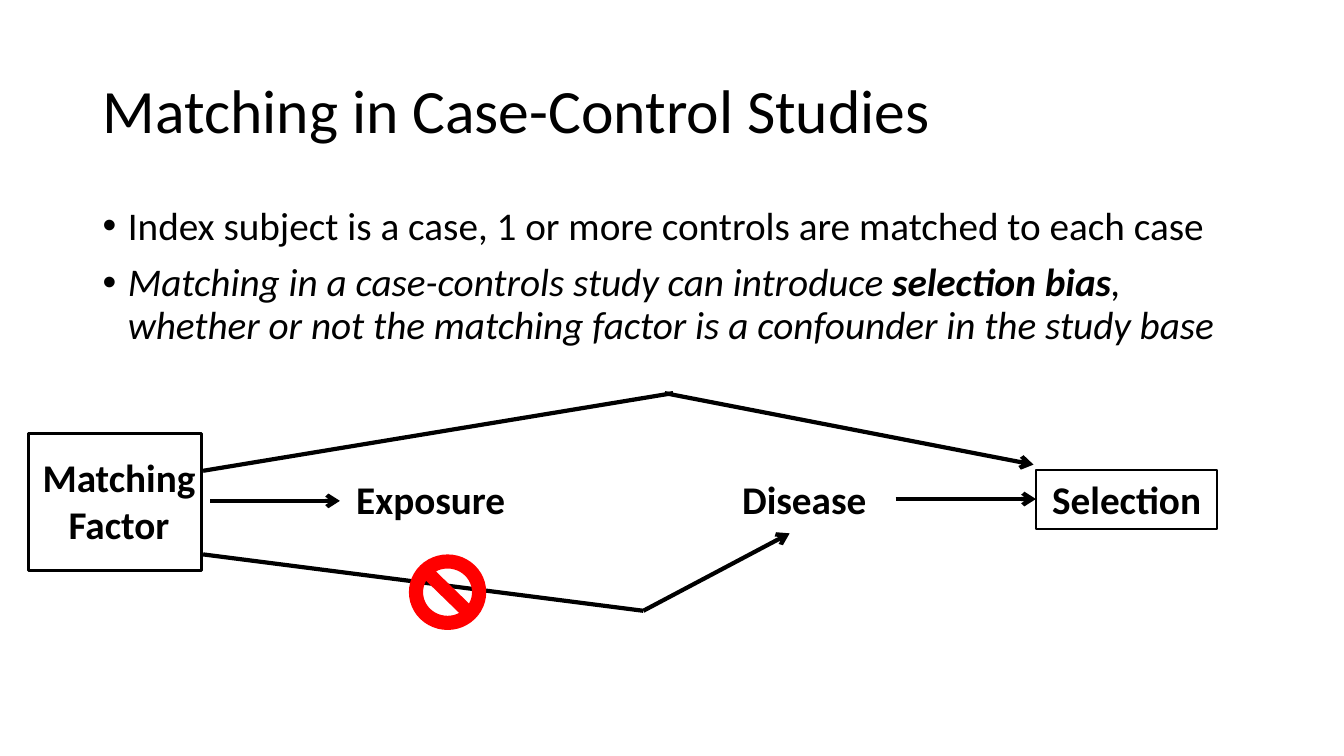
from typing import NamedTuple

from lxml.etree import SubElement
from pptx import Presentation
from pptx.dml.color import RGBColor
from pptx.enum.shapes import MSO_CONNECTOR as Connector, MSO_SHAPE as Shape
from pptx.enum.text import MSO_ANCHOR as Anchor, MSO_AUTO_SIZE as AutoSize, PP_ALIGN as Align
from pptx.oxml.ns import qn
from pptx.util import Inches, Pt

BLACK = RGBColor(0x00, 0x00, 0x00)
RED = RGBColor(0xFF, 0x00, 0x00)
FONT = "Calibri"
LABEL_W, LABEL_H = 15.25, 25.1


class Box(NamedTuple):
    """A region in inches, divided into 100 columns and 100 rows."""
    left: float
    top: float
    width: float
    height: float

    def point(self, column, row):
        return (Inches(self.left + self.width * column / 100),
                Inches(self.top + self.height * row / 100))

    def area(self, column, row, columns, rows):
        return (*self.point(column, row),
                Inches(self.width * columns / 100), Inches(self.height * rows / 100))


TITLE_BOX = Box(0.92, 0.4, 11.5, 1.45)
POINTS_BOX = Box(0.92, 2, 11.5, 4.76)
DIAGRAM_BOX = Box(0.28, 3.9, 11.8, 2.35)

POINTS = [
    [("Index subject is a case, 1 or more controls are matched to each case", False, False)],
    [("Matching in a case-controls study can introduce ", False, True),
     ("selection bias", True, True),
     (", whether or not the matching factor is a confounder in the study base", False, True)],
]
# Words, column, row, columns, rows, outline width
LABELS = [
    ("Exposure", 26.2, 32.8, LABEL_W, LABEL_H, None),
    ("Disease", 57.6, 32.4, LABEL_W, LABEL_H, None),
    ("Selection", 84.7, 32.4, LABEL_W, LABEL_H, 1.5),
    ("Matching Factor", 0, 23.4, LABEL_W, 44.3, None),
]
# Start, end, arrowhead
PATHS = [
    ((72.9, 44.7), (84.7, 44.7), True),
    ((15.3, 45.5), (26.2, 45.5), True),
    ((14.7, 32.8), (54.2, 0), False),
    ((53.5, 0), (84.5, 30.2), True),
    ((14.7, 68.1), (51.7, 91.9), False),
    ((51.7, 91.9), (64, 59.2), True),
]


def add_run(paragraph, words, size, bold=False, italic=False):
    run = paragraph.add_run()
    run.text = words
    font = run.font
    font.name, font.size, font.bold, font.italic = FONT, Pt(size), bold, italic
    font.color.rgb = BLACK


def add_title(slide, box):
    title = slide.shapes.title
    title.left, title.top, title.width, title.height = box.area(0, 0, 100, 100)
    frame = title.text_frame
    frame.auto_size = AutoSize.NONE
    frame.vertical_anchor = Anchor.MIDDLE
    heading = frame.paragraphs[0]
    heading.alignment, heading.line_spacing = Align.LEFT, 0.9
    add_run(heading, "Matching in Case-Control Studies", 44)


def add_points(slide, box):
    frame = slide.shapes.add_textbox(*box.area(0, 0, 100, 100)).text_frame
    frame.word_wrap = True
    for index, pieces in enumerate(POINTS):
        point = frame.add_paragraph() if index else frame.paragraphs[0]
        point.line_spacing, point.space_before = 0.9, Pt(10)
        properties = point._p.get_or_add_pPr()
        properties.set("marL", str(Inches(0.25)))
        properties.set("indent", str(-Inches(0.25)))
        SubElement(properties, qn("a:buFont"), typeface="Arial")
        SubElement(properties, qn("a:buChar"), char="•")
        for words, bold, italic in pieces:
            add_run(point, words, 28, bold, italic)


def add_label(slide, area, words, outline):
    label = slide.shapes.add_textbox(*area)
    if outline:
        label.line.color.rgb, label.line.width = BLACK, Pt(outline)
    frame = label.text_frame
    frame.word_wrap = True
    frame.auto_size = AutoSize.SHAPE_TO_FIT_TEXT
    frame.paragraphs[0].alignment = Align.CENTER
    add_run(frame.paragraphs[0], words, 28, bold=True)


def add_path(slide, start, end, arrowhead):
    path_line = slide.shapes.add_connector(Connector.STRAIGHT, *start, *end)
    path_line.line.color.rgb, path_line.line.width = BLACK, Pt(3)
    if arrowhead:
        SubElement(path_line.line._get_or_add_ln(), qn("a:tailEnd"), type="arrow")
    SubElement(path_line._element.spPr, qn("a:effectLst"))


def add_diagram(slide, box):
    for words, column, row, columns, rows, outline in LABELS:
        add_label(slide, box.area(column, row, columns, rows), words, outline)
    for start, end, arrowhead in PATHS:
        add_path(slide, box.point(*start), box.point(*end), arrowhead)

    factor_frame = slide.shapes.add_shape(Shape.RECTANGLE, *box.area(0, 17, 14.6, 57.9))
    factor_frame.shadow.inherit = False
    factor_frame.fill.background()
    factor_frame.line.color.rgb, factor_frame.line.width = BLACK, Pt(2.25)

    blocked = slide.shapes.add_shape(Shape.NO_SYMBOL, *box.area(32, 68.1, 6.5, 31.9))
    blocked.shadow.inherit = False
    blocked.fill.solid()
    blocked.fill.fore_color.rgb = RED
    blocked.line.fill.background()


def main():
    deck = Presentation()
    deck.slide_width, deck.slide_height = Inches(13.33), Inches(7.5)
    slide = deck.slides.add_slide(deck.slide_layouts[5])
    add_title(slide, TITLE_BOX)
    add_points(slide, POINTS_BOX)
    add_diagram(slide, DIAGRAM_BOX)
    deck.save("out.pptx")


if __name__ == "__main__":
    main()
